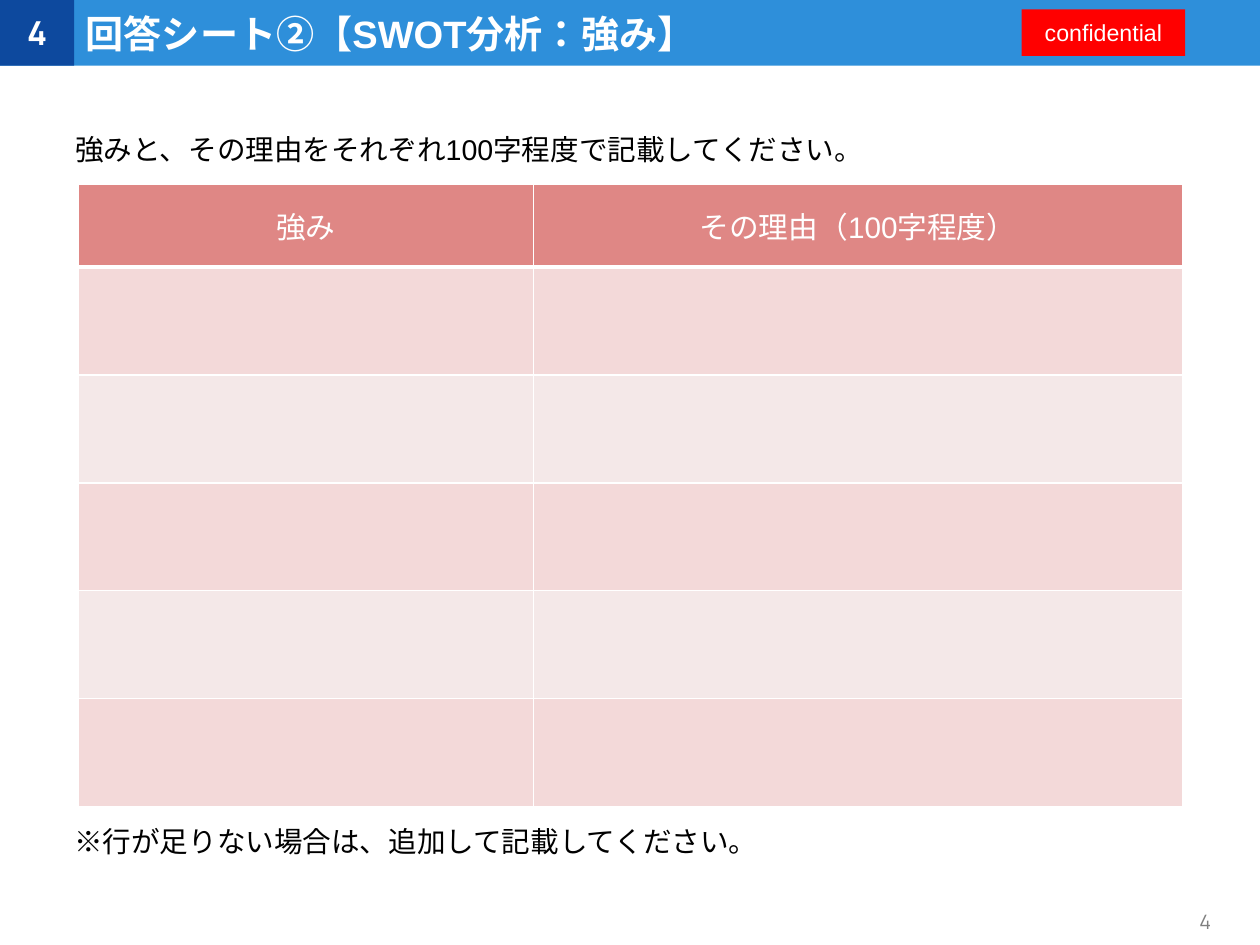
"""Builds the SWOT strengths answer sheet as a one-slide presentation."""
from dataclasses import dataclass
from typing import Optional

from lxml import etree
from pptx import Presentation
from pptx import util as u
from pptx.dml.color import RGBColor
from pptx.enum import lang, shapes, text
from pptx.oxml import ns


@dataclass(frozen=True)
class Theme:
    bar: str = "2E8FDA"
    number: str = "0D499E"
    badge: str = "FF0000"
    header: str = "DF8785"
    bands: tuple[str, str] = ("F3D9D9", "F4E8E8")
    white: str = "FFFFFF"
    black: str = "000000"
    grey: str = "7F7F7F"
    body_font: str = "Arial"
    number_font: str = "Manrope"
    title_size: float = 24
    number_size: float = 20.8
    header_size: float = 18.7
    body_size: float = 18
    badge_size: float = 14.6
    footer_size: float = 12.5


@dataclass(frozen=True)
class Style:
    size: float
    color: str
    font: str
    bold: Optional[bool] = None
    align: Optional[text.PP_ALIGN] = None
    spacing: Optional[float] = None


@dataclass(frozen=True)
class Box:
    left: float
    top: float
    width: float
    height: float
    label: str = ""
    style: Optional[Style] = None
    fill: Optional[str] = None


T = Theme()
CENTER = text.PP_ALIGN.CENTER
MIDDLE = text.MSO_ANCHOR.MIDDLE
TITLE = Style(T.title_size, T.white, T.body_font, True, text.PP_ALIGN.LEFT)
NUMBER = Style(T.number_size, T.white, T.number_font, True, CENTER)
BADGE = Style(T.badge_size, T.white, T.body_font, align=CENTER)
FOOTER = Style(T.footer_size, T.grey, T.number_font, align=CENTER)
HEADER = Style(T.header_size, T.white, T.body_font, align=CENTER)
BODY = Style(T.body_size, T.black, T.body_font, spacing=1.5)

WIDTH, HEIGHT, BAR_HEIGHT, NUMBER_WIDTH = 793.75, 595.25, 41.3, 46.8
BARS = (
    Box(0, 0, WIDTH, BAR_HEIGHT, fill=T.bar),
    Box(643.7, 6, 103, 29.2, "confidential", BADGE, T.badge),
    Box(0, 0, NUMBER_WIDTH, BAR_HEIGHT, "4", NUMBER, T.number),
)
HEADING = Box(NUMBER_WIDTH, 0, 592, BAR_HEIGHT, "回答シート②【SWOT分析：強み】", TITLE)
PAGE = Box(735.8, 559.9, NUMBER_WIDTH, BAR_HEIGHT, "4", FOOTER)
NOTES = (
    Box(47.5, 72, 700, 29.5, "強みと、その理由をそれぞれ100字程度で記載してください。", BODY),
    Box(46.8, 508, 700, 29.5, "※行が足りない場合は、追加して記載してください。", BODY),
)
HEADERS = ("強み", "その理由（100字程度）")
COLUMN_WIDTHS = (286.6, 409)
HEADER_HEIGHT, ROW_HEIGHT, ROW_COUNT = 52.3, 68, 5


def bounds(box: Box) -> tuple[u.Length, ...]:
    return tuple(u.Pt(v) for v in (box.left, box.top, box.width, box.height))


def write(tf, label: str, style: Style) -> None:
    tf.text = label
    p = tf.paragraphs[0]
    p.alignment = style.align
    p.line_spacing = style.spacing
    for r in p.runs:
        r.font.size = u.Pt(style.size)
        r.font.name = style.font
        r.font.bold = style.bold
        r.font.language_id = lang.MSO_LANGUAGE_ID.JAPANESE
        r.font.color.rgb = RGBColor.from_string(style.color)


def paint(fill, color: str) -> None:
    fill.solid()
    fill.fore_color.rgb = RGBColor.from_string(color)


def add_bar(s, box: Box) -> None:
    sp = s.shapes.add_shape(shapes.MSO_SHAPE.RECTANGLE, *bounds(box))
    sp.shadow.inherit = False
    paint(sp.fill, box.fill)
    sp.line.fill.background()
    if box.style:
        sp.text_frame.vertical_anchor = MIDDLE
        write(sp.text_frame, box.label, box.style)


def add_text(s, box: Box):
    tf = s.shapes.add_textbox(*bounds(box)).text_frame
    tf.word_wrap = True
    write(tf, box.label, box.style)
    return tf


def add_note(s, box: Box) -> None:
    tf = add_text(s, box)
    tf.margin_left = tf.margin_top = tf.margin_right = tf.margin_bottom = 0
    tf.auto_size = text.MSO_AUTO_SIZE.SHAPE_TO_FIT_TEXT


def place_title(s, box: Box) -> None:
    sp = s.shapes.title
    sp.left, sp.top, sp.width, sp.height = bounds(box)
    tf = sp.text_frame
    tf.word_wrap = True
    tf.auto_size = text.MSO_AUTO_SIZE.NONE
    tf.vertical_anchor = MIDDLE
    write(tf, box.label, box.style)
    sp.element.getparent().append(sp.element)


def set_borders(cell, top: float, bottom: float) -> None:
    tc_pr = cell._tc.get_or_add_tcPr()
    for side, width in (("L", 1), ("R", 1), ("T", top), ("B", bottom)):
        ln = etree.SubElement(tc_pr, ns.qn(f"a:ln{side}"), w=str(u.Pt(width)))
        fill = etree.SubElement(ln, ns.qn("a:solidFill"))
        etree.SubElement(fill, ns.qn("a:srgbClr"), val=T.white)


def add_answer_table(s) -> None:
    box = Box(49.4, 115.9, sum(COLUMN_WIDTHS), HEADER_HEIGHT + ROW_COUNT * ROW_HEIGHT)
    table = s.shapes.add_table(ROW_COUNT + 1, len(HEADERS), *bounds(box)).table
    for column, width in zip(table.columns, COLUMN_WIDTHS):
        column.width = u.Pt(width)
    for i, row in enumerate(table.rows):
        row.height = u.Pt(ROW_HEIGHT if i else HEADER_HEIGHT)
        for cell, label in zip(row.cells, HEADERS):
            set_borders(cell, 3 if i == 1 else 1, 1 if i else 3)
            paint(cell.fill, T.bands[(i - 1) % 2] if i else T.header)
            if i == 0:
                cell.vertical_anchor = MIDDLE
                write(cell.text_frame, label, HEADER)


def main() -> None:
    prs = Presentation()
    prs.slide_width, prs.slide_height = u.Pt(WIDTH), u.Pt(HEIGHT)
    s = prs.slides.add_slide(prs.slide_layouts[5])
    for bar in BARS:
        add_bar(s, bar)
    add_text(s, PAGE).vertical_anchor = MIDDLE
    place_title(s, HEADING)
    add_answer_table(s)
    for note in NOTES:
        add_note(s, note)
    prs.save("out.pptx")


if __name__ == "__main__":
    main()
